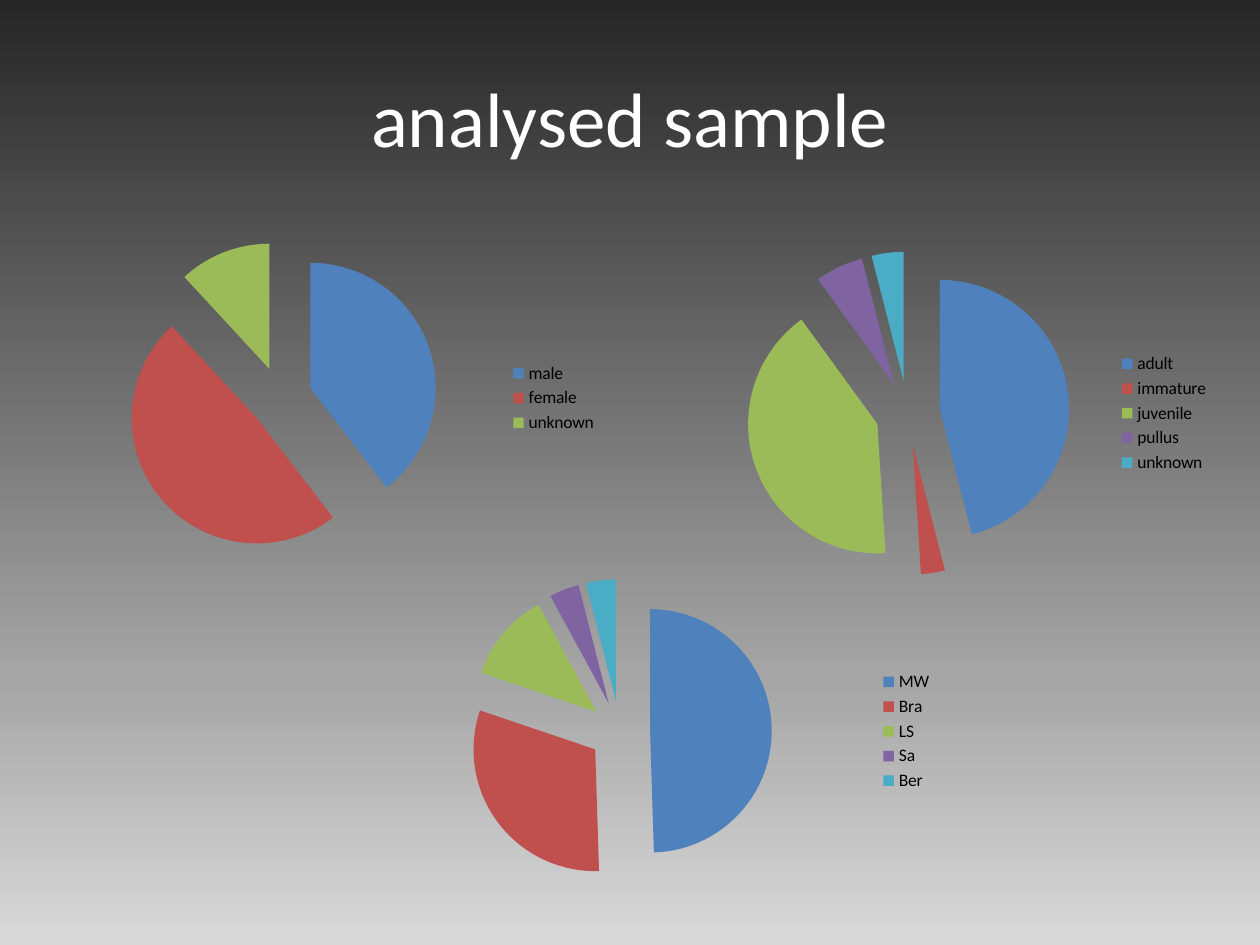
import pptx
import pptx.chart.data
import pptx.dml.color
import pptx.enum.chart
import pptx.enum.text
import pptx.oxml
import pptx.oxml.ns
import pptx.util
from lxml import etree

Inches = pptx.util.Inches
qn = pptx.oxml.ns.qn

FONT = "Calibri"
SLICE_COLORS = ["4F81BD", "C0504D", "9BBB59", "8064A2", "4BACC6"]
BACKGROUND_STOPS = [(0, "262626"), (72, "A6A6A6"), (100, "D9D9D9")]
EXPLOSION = 25

# (left, top, width, height), shares by category
SAMPLE_CHARTS = [
    ((0.43, 1.78, 4.41, 2.76), {"male": 40, "female": 49, "unknown": 12}),
    ((5.55, 1.86, 4.15, 2.84),
     {"adult": 46, "immature": 3, "juvenile": 41, "pullus": 6, "unknown": 4}),
    ((2.87, 4.46, 4.63, 2.69),
     {"MW": 50, "Bra": 31, "LS": 12, "Sa": 4, "Ber": 4}),
]


def rgb(value):
    return pptx.dml.color.RGBColor.from_string(value)


def style_font(font, size, color):
    font.name = FONT
    font.size = pptx.util.Pt(size)
    font.color.rgb = rgb(color)


def set_background(slide):
    """Fill the background with a gradient running from top to bottom."""
    slide.background.fill.gradient()
    gradient = slide.element.find(".//" + qn("a:gradFill"))
    stops = gradient.find(qn("a:gsLst"))
    for old_stop in list(stops):
        stops.remove(old_stop)
    for percent, color in BACKGROUND_STOPS:
        stop = etree.SubElement(stops, qn("a:gs"), pos=str(percent * 1000))
        etree.SubElement(stop, qn("a:srgbClr"), val=color)
    direction = gradient.find(qn("a:lin"))
    direction.set("ang", str(90 * 60000))
    direction.set("scaled", "0")


def set_title(slide, text):
    title = slide.shapes.title
    title.left, title.top = Inches(0.5), Inches(0.3)
    title.width, title.height = Inches(9), Inches(1.25)
    title.text_frame.text = text
    title.text_frame.vertical_anchor = pptx.enum.text.MSO_ANCHOR.MIDDLE
    paragraph = title.text_frame.paragraphs[0]
    paragraph.alignment = pptx.enum.text.PP_ALIGN.CENTER
    style_font(paragraph.runs[0].font, 44, "FFFFFF")


def explode(series):
    """Move all slices outwards; the element must precede the data points."""
    explosion = pptx.oxml.parse_xml(
        f'<c:explosion {pptx.oxml.ns.nsdecls("c")} val="{EXPLOSION}"/>')
    series.format.fill  # ensures that shape properties come first
    first_point = series._element.find(qn("c:dPt"))
    first_point.addprevious(explosion)


def add_exploded_pie(slide, box, shares):
    data = pptx.chart.data.CategoryChartData()
    data.categories = list(shares)
    data.add_series("Series 1", list(shares.values()))
    chart = slide.shapes.add_chart(
        pptx.enum.chart.XL_CHART_TYPE.PIE, *map(Inches, box), data).chart
    chart.has_title = False
    style_font(chart.font, 10, "000000")
    chart.has_legend = True
    chart.legend.position = pptx.enum.chart.XL_LEGEND_POSITION.RIGHT
    chart.legend.include_in_layout = False

    plot = chart.plots[0]
    plot.vary_by_categories = True
    series = plot.series[0]
    for index, color in enumerate(SLICE_COLORS[:len(shares)]):
        fill = series.points[index].format.fill
        fill.solid()
        fill.fore_color.rgb = rgb(color)
    explode(series)


def main():
    deck = pptx.Presentation()
    deck.slide_width, deck.slide_height = Inches(10), Inches(7.5)
    slide = deck.slides.add_slide(deck.slide_layouts.get_by_name("Title Only"))
    set_background(slide)
    set_title(slide, "analysed sample")
    for box, shares in SAMPLE_CHARTS:
        add_exploded_pie(slide, box, shares)
    deck.save("out.pptx")


if __name__ == "__main__":
    main()
